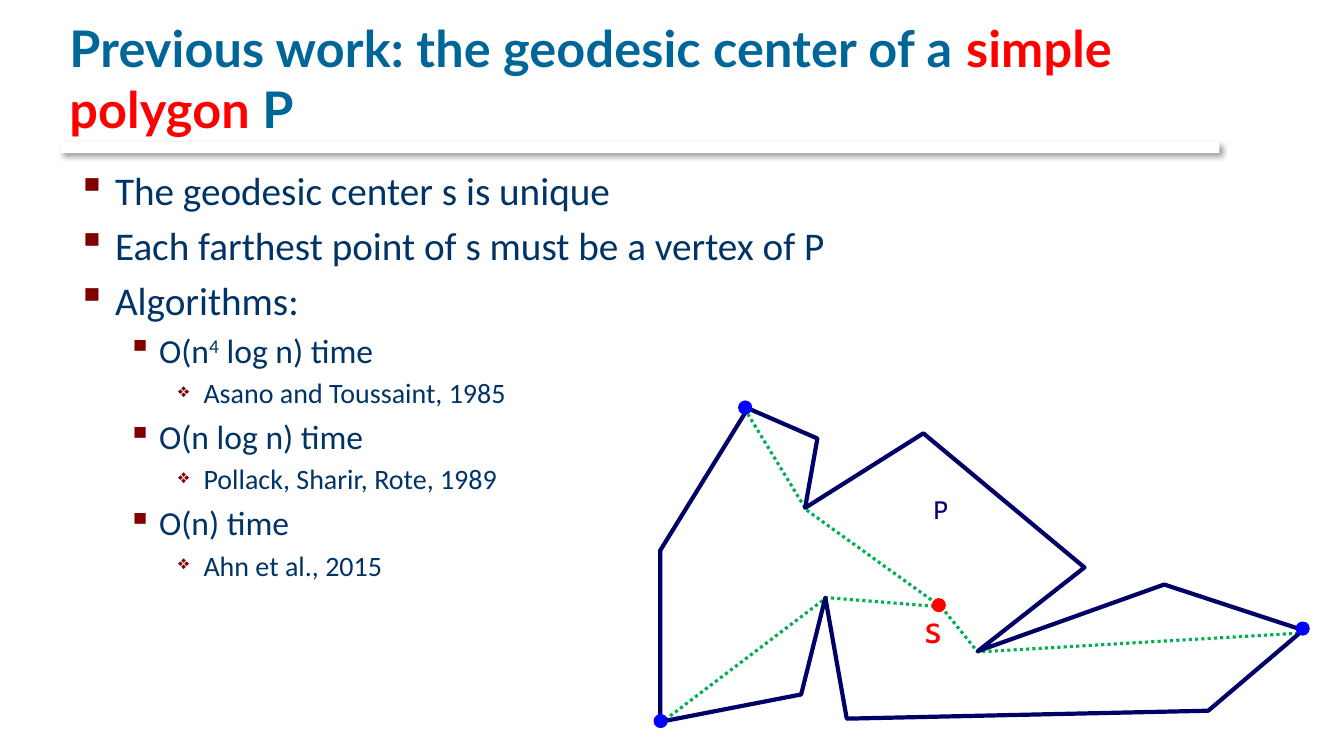
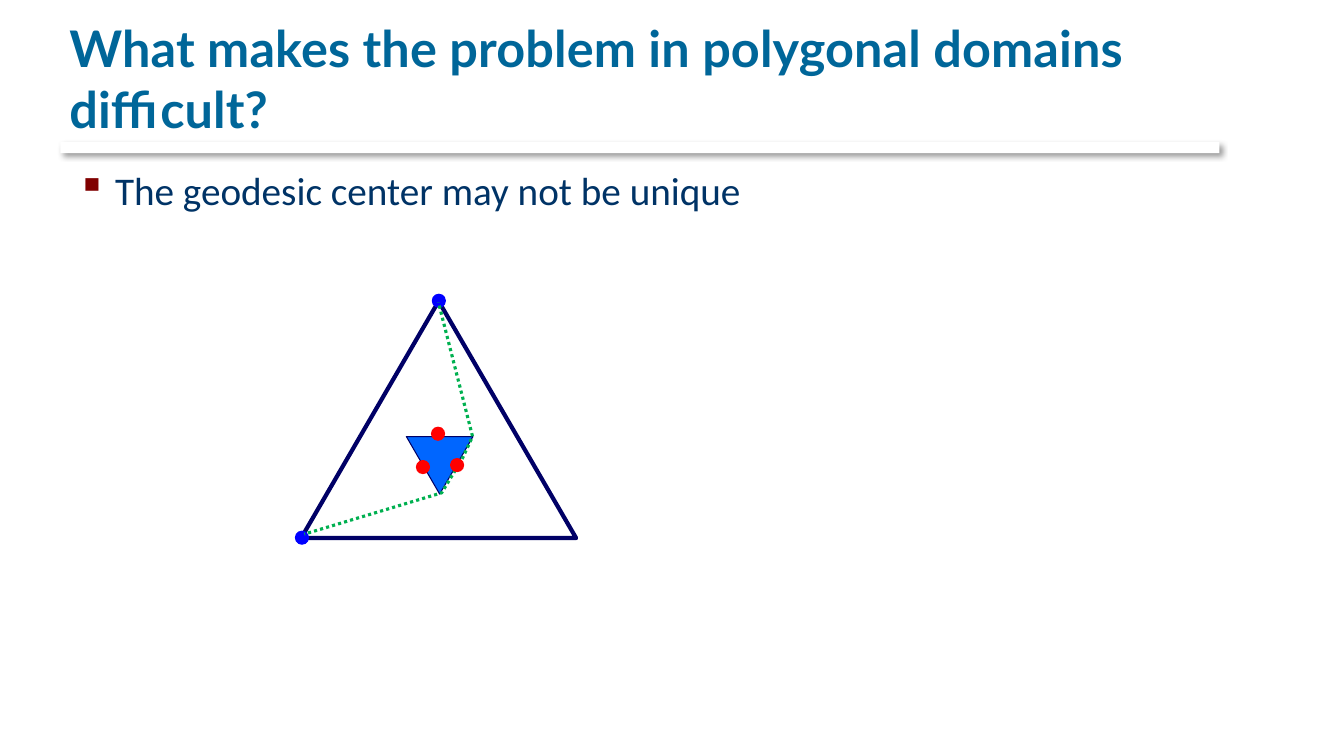
"""Two slides on geodesic centers, in simple polygons and in polygonal domains."""
from lxml import etree
from pptx import Presentation
from pptx.dml.color import RGBColor
from pptx.enum.dml import MSO_LINE
from pptx.enum.shapes import MSO_SHAPE
from pptx.enum.text import MSO_ANCHOR
from pptx.util import Cm, Pt

DOTTED = MSO_LINE.ROUND_DOT
RECTANGLE, ELLIPSE, TRIANGLE = MSO_SHAPE.RECTANGLE, MSO_SHAPE.OVAL, MSO_SHAPE.ISOSCELES_TRIANGLE
TOP, BOTTOM = MSO_ANCHOR.TOP, MSO_ANCHOR.BOTTOM

WHITE = RGBColor(0xFF, 0xFF, 0xFF)
TEAL = RGBColor(0x00, 0x66, 0x99)
NAVY = RGBColor(0x00, 0x33, 0x66)
OUTLINE = RGBColor(0x00, 0x00, 0x66)
RED = RGBColor(0xFF, 0x00, 0x00)
BLUE = RGBColor(0x00, 0x00, 0xFF)
HOLE_BLUE = RGBColor(0x00, 0x66, 0xFF)
GREEN = RGBColor(0x00, 0xB0, 0x50)
BULLET_COLOR = "800000"

NAMESPACE = "http://schemas.openxmlformats.org/drawingml/2006/main"
SLIDE_SIZE = (33.87, 19.05)
TITLE_BOX = (1.5, 0.43, 28.78, 3.18)
RULE_BOX = (1.52, 3.58, 29.21, 0.28)
DOT_SIZE = 0.33

TITLE_FONT = {"name": "Lato", "size": Pt(36), "bold": True}
LEVELS = [
    {"size": 28, "margin": 0.95, "hanging": 0.95, "mark": "▪", "scale": 100},
    {"size": 24, "margin": 2.06, "hanging": 0.79, "mark": "▪", "scale": 100},
    {"size": 20, "margin": 3.18, "hanging": 0.64, "mark": "❖", "scale": 70},
]

THICK = {"color": OUTLINE, "width": 3}
THIN = {"color": OUTLINE, "width": 0.75}
PATH = {"color": GREEN, "width": 2.25, "dash": DOTTED}

POLYGON = [
    (16.64, 13.87), (18.85, 10.29), (20.6, 11.05), (20.29, 12.8), (23.27, 10.92),
    (27.33, 14.3), (24.64, 16.41), (29.34, 14.73), (32.84, 15.88), (30.45, 17.91),
    (21.34, 18.11), (20.8, 15.06), (20.19, 17.5), (16.64, 18.19),
]

SLIDES = [
    {
        "title": [("Previous work: the geodesic center of a ", TEAL),
                  ("simple polygon", RED), (" P", TEAL)],
        "body_box": (1.7, 4.06, 30.94, 3.84),
        "body": [
            (0, ["The geodesic center s is unique"]),
            (0, ["Each farthest point of s must be a vertex of P"]),
            (0, ["Algorithms:"]),
            (1, ["O(n", "4", " log n) time"]),
            (2, ["Asano and Toussaint, 1985"]),
            (1, ["O(n log n) time"]),
            (2, ["Pollack, Sharir, Rote, 1989"]),
            (1, ["O(n) time"]),
            (2, ["Ahn et al., 2015"]),
        ],
        "figure": [
            ("path", [(23.6, 15.21), (20.32, 12.85), (18.85, 10.44)]),
            ("path", [(23.7, 15.29), (20.83, 15.06), (16.76, 18.14)]),
            ("path", [(23.72, 15.29), (24.64, 16.43), (32.84, 15.95)]),
            ("polygon", POLYGON),
            ("label", "P", (23.27, 12.34, 0.84, 1.02), 18, OUTLINE),
            ("dot", (23.66, 15.25), RED),
            ("label", "s", (23.06, 15.11, 0.89, 1.45), 28, RED),
            ("dot", (32.83, 15.84), BLUE),
            ("dot", (18.78, 10.27), BLUE),
            ("dot", (16.65, 18.17), BLUE),
        ],
    },
    {
        "title": [("What makes the problem in polygonal domains difficult?", TEAL)],
        "body_box": (1.7, 4.06, 18.21, 13.41),
        "body": [(0, ["The geodesic center may not be unique"])],
        "figure": [
            ("triangle", (7.59, 7.59, 6.93, 5.97), None, THICK, 0),
            ("triangle", (10.24, 11, 1.68, 1.45), HOLE_BLUE, THIN, 180),
            ("dot", (11.06, 7.58), BLUE),
            ("dot", (7.61, 13.55), BLUE),
            ("path", [(11.56, 11.71), (11.13, 12.42), (7.67, 13.46)]),
            ("path", [(11.58, 11.71), (11.91, 11), (11.05, 7.62)]),
            ("dot", (11.52, 11.72), RED),
            ("dot", (11.04, 10.93), RED),
            ("dot", (10.66, 11.77), RED),
        ],
    },
]


def lengths(values):
    return [Cm(value) for value in values]


def add_node(parent, tag, **attributes):
    node = etree.SubElement(parent, f"{{{NAMESPACE}}}{tag}")
    for key, value in attributes.items():
        node.set(key, str(value))
    return node


def paint(shape, fill=None, line=None):
    shape.shadow.inherit = False
    if fill is None:
        shape.fill.background()
    else:
        shape.fill.solid()
        shape.fill.fore_color.rgb = fill
    if line is None:
        shape.line.fill.background()
        return
    shape.line.color.rgb = line["color"]
    shape.line.width = Pt(line["width"])
    if "dash" in line:
        shape.line.dash_style = line["dash"]


def add_text_box(page, place, anchor=TOP, wrap=True):
    frame = page.shapes.add_textbox(*lengths(place)).text_frame
    frame.word_wrap = wrap
    frame.vertical_anchor = anchor
    return frame


def add_span(para, text, color, font):
    span = para.add_run()
    span.text = text
    for name, value in font.items():
        setattr(span.font, name, value)
    span.font.color.rgb = color
    return span


def add_title(page, parts):
    para = add_text_box(page, TITLE_BOX, BOTTOM).paragraphs[0]
    for text, color in parts:
        span = add_span(para, text, color, TITLE_FONT)
        span.font._element.set("spc", "10")


def add_rule(page):
    rule = page.shapes.add_shape(RECTANGLE, *lengths(RULE_BOX))
    paint(rule, WHITE)
    effects = rule._element.spPr.find(f"{{{NAMESPACE}}}effectLst")
    shadow = add_node(effects, "outerShdw", blurRad=Pt(4), dist=Pt(3),
                      dir=45 * 60000, algn="tl", rotWithShape=0)
    add_node(add_node(shadow, "srgbClr", val="000000"), "alpha", val=40000)


def format_bullet(para, level):
    properties = para._p.get_or_add_pPr()
    properties.set("marL", str(Cm(level["margin"])))
    properties.set("indent", str(-Cm(level["hanging"])))
    add_node(add_node(properties, "spcBef"), "spcPct", val=20000)
    add_node(add_node(properties, "buClr"), "srgbClr", val=BULLET_COLOR)
    add_node(properties, "buSzPct", val=level["scale"] * 1000)
    add_node(properties, "buChar", char=level["mark"])


def add_body(page, place, items):
    frame = add_text_box(page, place)
    for index, (depth, texts) in enumerate(items):
        para = frame.add_paragraph() if index else frame.paragraphs[0]
        para.level = depth
        level = LEVELS[depth]
        format_bullet(para, level)
        font = {"name": "Calibri", "size": Pt(level["size"])}
        for position, text in enumerate(texts):
            span = add_span(para, text, NAVY, font)
            if position % 2:
                span.font._element.set("baseline", "30000")


def add_outline(page, points, line, close):
    start, *others = [lengths(point) for point in points]
    builder = page.shapes.build_freeform(*start)
    builder.add_line_segments(others, close=close)
    paint(builder.convert_to_shape(), line=line)


def add_path(page, points):
    add_outline(page, points, PATH, False)


def add_polygon(page, points):
    add_outline(page, points, THICK, True)


def add_triangle(page, place, fill, line, rotation):
    triangle = page.shapes.add_shape(TRIANGLE, *lengths(place))
    triangle.rotation = rotation
    paint(triangle, fill, line)


def add_dot(page, center, color):
    corner = [value - DOT_SIZE / 2 for value in center]
    dot = page.shapes.add_shape(ELLIPSE, *lengths([*corner, DOT_SIZE, DOT_SIZE]))
    paint(dot, color, {"color": color, "width": 0.75})


def add_label(page, text, place, size, color):
    frame = add_text_box(page, place, wrap=False)
    add_span(frame.paragraphs[0], text, color, {"name": "Cabin", "size": Pt(size)})


DRAW = {"path": add_path, "polygon": add_polygon, "triangle": add_triangle,
        "dot": add_dot, "label": add_label}


def main():
    deck = Presentation()
    deck.slide_width, deck.slide_height = lengths(SLIDE_SIZE)
    for content in SLIDES:
        page = deck.slides.add_slide(deck.slide_layouts[6])
        add_rule(page)
        add_title(page, content["title"])
        add_body(page, content["body_box"], content["body"])
        for kind, *details in content["figure"]:
            DRAW[kind](page, *details)
    deck.save("out.pptx")


if __name__ == "__main__":
    main()
